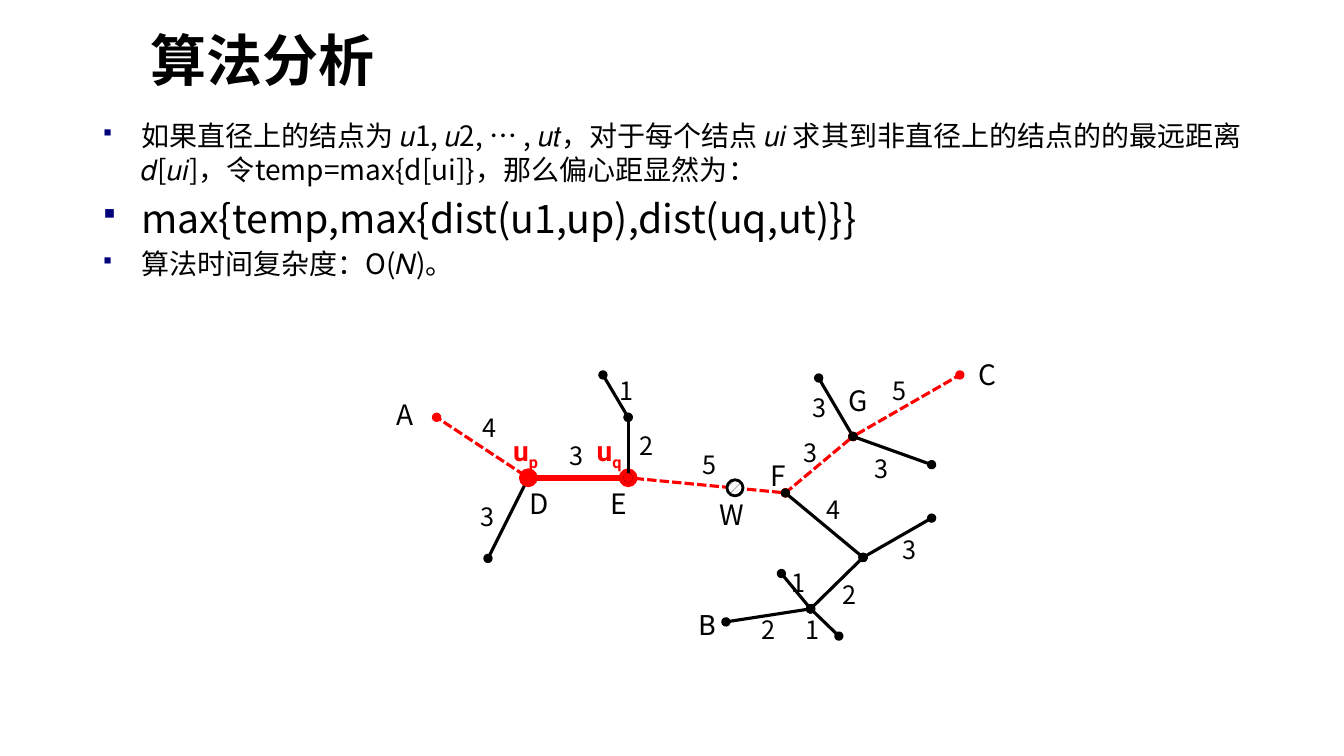
import pptx
import pptx.util
import pptx.dml.color
import pptx.enum.dml
import pptx.enum.shapes
import pptx.enum.text
import pptx.oxml
import pptx.oxml.ns
from lxml import etree

Inches, Pt = pptx.util.Inches, pptx.util.Pt
RGBColor = pptx.dml.color.RGBColor
BLACK = RGBColor(0x00, 0x00, 0x00)
WHITE = RGBColor(0xFF, 0xFF, 0xFF)
RED = RGBColor(0xFF, 0x00, 0x00)
NAVY = RGBColor(0x00, 0x00, 0x7D)
CJK_FONT, HEADING_FONT, NODE_FONT = "Noto Sans CJK SC", "Arial", "Roboto"

HEADING = "算法分析"
POINTS = [
    ("如果直径上的结点为 𝑢1, 𝑢2, ⋯ , 𝑢𝑡，对于每个结点 𝑢𝑖 求其到非直径上的结点的的最远距离 𝑑[𝑢𝑖]，"
     "令temp=max{d[ui]}，那么偏心距显然为：", 20),
    ("max{temp,max{dist(u1,up),dist(uq,ut)}}", 28),
    ("算法时间复杂度：O(𝑁)。", 20),
]

NODES = {
    "A": (0.53, 0.64), "D": (1.44, 1.24), "D leaf": (1.04, 2.04),
    "E": (2.43, 1.24), "E branch": (2.43, 0.64), "E leaf": (2.18, 0.22),
    "F": (3.99, 1.39), "G": (4.66, 0.83), "C": (5.72, 0.22),
    "G upper leaf": (4.32, 0.25), "G lower leaf": (5.44, 1.11),
    "H": (4.76, 2.03), "H leaf": (5.44, 1.64), "K": (4.24, 2.54),
    "B": (3.4, 2.67), "K upper leaf": (3.95, 2.19), "K lower leaf": (4.52, 2.81),
}
DIAMETER, CENTRE, BRANCH = (RED, 2.25, True), (RED, 4.5, False), (BLACK, 2.25, False)
EDGES = [
    ("D", "A", DIAMETER), ("D", "D leaf", BRANCH), ("E", "D", CENTRE),
    ("E branch", "E leaf", BRANCH), ("E branch", "E", BRANCH),
    ("F", "E", DIAMETER), ("G", "F", DIAMETER), ("G upper leaf", "G", BRANCH),
    ("G", "C", DIAMETER), ("G", "G lower leaf", BRANCH), ("H", "K", BRANCH),
    ("H", "F", BRANCH), ("H", "H leaf", BRANCH), ("K", "B", BRANCH),
    ("K", "K upper leaf", BRANCH), ("K lower leaf", "K", BRANCH),
]
NODE_LABELS = [
    ("A", 0.03, 0.39), ("D", 1.35, 1.28), ("E", 2.16, 1.28), ("F", 3.74, 1.0),
    ("G", 4.52, 0.26), ("C", 5.81, 0),
]
WEIGHTS = [
    ("4", 0.89, 0.54), ("4", 4.3, 1.35), ("3", 4.16, 0.34), ("3", 4.77, 0.95),
    ("3", 5.05, 1.75), ("3", 0.87, 1.42), ("3", 1.75, 0.82), ("3", 4.07, 0.79),
    ("2", 2.44, 0.72), ("5", 4.95, 0.17), ("2", 4.46, 2.2), ("2", 3.65, 2.55),
    ("5", 3.07, 0.91), ("1", 2.25, 0.17), ("1", 3.95, 2.08), ("1", 4.09, 2.55),
]


def add_run(paragraph, text, size, font, color=BLACK, bold=False):
    """Append one formatted run and return it."""
    run = paragraph.add_run()
    run.text = text
    run.font.size, run.font.name, run.font.bold = Pt(size), font, bold
    run.font.color.rgb = color
    return run


def place(placeholder, left, top, width, height):
    """Move a placeholder and return its text frame with fixed size."""
    placeholder.left, placeholder.top = Inches(left), Inches(top)
    placeholder.width, placeholder.height = Inches(width), Inches(height)
    frame = placeholder.text_frame
    frame.auto_size = pptx.enum.text.MSO_AUTO_SIZE.NONE
    return frame


def add_bullet(paragraph):
    """Give a paragraph a hanging navy square."""
    properties = paragraph._p.get_or_add_pPr()
    properties.set("marL", str(Inches(0.38)))
    properties.set("indent", str(-Inches(0.38)))
    color = etree.SubElement(properties, pptx.oxml.ns.qn("a:buClr"))
    etree.SubElement(color, pptx.oxml.ns.qn("a:srgbClr"), val=str(NAVY))
    etree.SubElement(properties, pptx.oxml.ns.qn("a:buSzPct"), val="75000")
    etree.SubElement(properties, pptx.oxml.ns.qn("a:buFont"), typeface="Wingdings", charset="2")
    etree.SubElement(properties, pptx.oxml.ns.qn("a:buChar"), char="§")


def fill_title(slide, left, top, width, height):
    """Write the heading in the title placeholder."""
    frame = place(slide.shapes.title, left, top, width, height)
    frame.vertical_anchor = pptx.enum.text.MSO_ANCHOR.MIDDLE
    heading = frame.paragraphs[0]
    heading.alignment = pptx.enum.text.PP_ALIGN.LEFT
    add_run(heading, HEADING, 40, HEADING_FONT, bold=True)


def fill_body(slide, left, top, width, height):
    """Write the analysis points in the body placeholder."""
    frame = place(slide.placeholders[1], left, top, width, height)
    for index, (text, size) in enumerate(POINTS):
        point = frame.add_paragraph() if index else frame.paragraphs[0]
        add_bullet(point)
        point.space_before = Pt(size * 0.2 if index else 0)
        add_run(point, text, size, CJK_FONT)


def add_edge(shapes, start, end, color, weight, dashed):
    """Draw a tree edge with a dot at each end."""
    edge = shapes.add_connector(pptx.enum.shapes.MSO_CONNECTOR.STRAIGHT,
                                *(Inches(value) for value in start + end))
    edge.line.color.rgb, edge.line.width = color, Pt(weight)
    if dashed:
        edge.line.dash_style = pptx.enum.dml.MSO_LINE.SQUARE_DOT
    outline = edge.line._get_or_add_ln()
    for tag in ("a:headEnd", "a:tailEnd"):
        etree.SubElement(outline, pptx.oxml.ns.qn(tag), type="oval")
    etree.SubElement(edge._element.spPr, pptx.oxml.ns.qn("a:effectLst"))


def add_label(shapes, left, top, text, size, font=CJK_FONT, subscript=""):
    """Write a label, in bold red when it has a subscript."""
    width = 0.55 if subscript else 0.41
    label = shapes.add_textbox(Inches(left), Inches(top), Inches(width), Inches(size * 0.022))
    label.text_frame.word_wrap = True
    paragraph = label.text_frame.paragraphs[0]
    style = (size, font, RED if subscript else BLACK, bool(subscript))
    add_run(paragraph, text, *style)
    if subscript:
        index = add_run(paragraph, subscript, *style)
        index.font._element.set("baseline", "-25000")


def add_midpoint(shapes, left, top, size):
    """Draw the dotted circle of point W."""
    midpoint = shapes.add_shape(pptx.enum.shapes.MSO_SHAPE.OVAL, Inches(left), Inches(top),
                                Inches(size), Inches(size))
    midpoint.shadow.inherit = False
    midpoint.fill.patterned()
    midpoint.fill.pattern = pptx.enum.dml.MSO_PATTERN.PERCENT_20
    midpoint.fill.fore_color.rgb, midpoint.fill.back_color.rgb = BLACK, WHITE
    midpoint.line.color.rgb, midpoint.line.width = BLACK, Pt(2)


def add_tree(slide, left, top):
    """Draw the weighted tree from its top left corner."""
    shapes = slide.shapes.add_group_shape().shapes
    nodes = {name: (left + x, top + y) for name, (x, y) in NODES.items()}
    for start, end, style in EDGES:
        add_edge(shapes, nodes[start], nodes[end], *style)
    for labels, size in ((NODE_LABELS, 20), (WEIGHTS, 18)):
        for text, x, y in labels:
            add_label(shapes, left + x, top + y, text, size)
    add_midpoint(shapes, left + 3.41, top + 1.26, 0.16)
    add_label(shapes, left + 3.24, top + 1.39, "W", 20)
    add_label(shapes, left + 3.03, top + 2.48, "B", 20, NODE_FONT)
    for x, subscript in ((2.02, "q"), (1.19, "p")):
        add_label(shapes, left + x, top + 0.75, "u", 20, NODE_FONT, subscript)


def main():
    """Build and save the slide."""
    presentation = pptx.Presentation()
    presentation.slide_width, presentation.slide_height = Inches(13.33), Inches(7.5)
    slide = presentation.slides.add_slide(presentation.slide_layouts[1])
    fill_body(slide, 0.92, 1.13, 11.96, 5.97)
    fill_title(slide, 1.39, 0.3, 10.69, 0.57)
    add_tree(slide, 3.8, 3.5)
    presentation.save("out.pptx")


if __name__ == "__main__":
    main()
